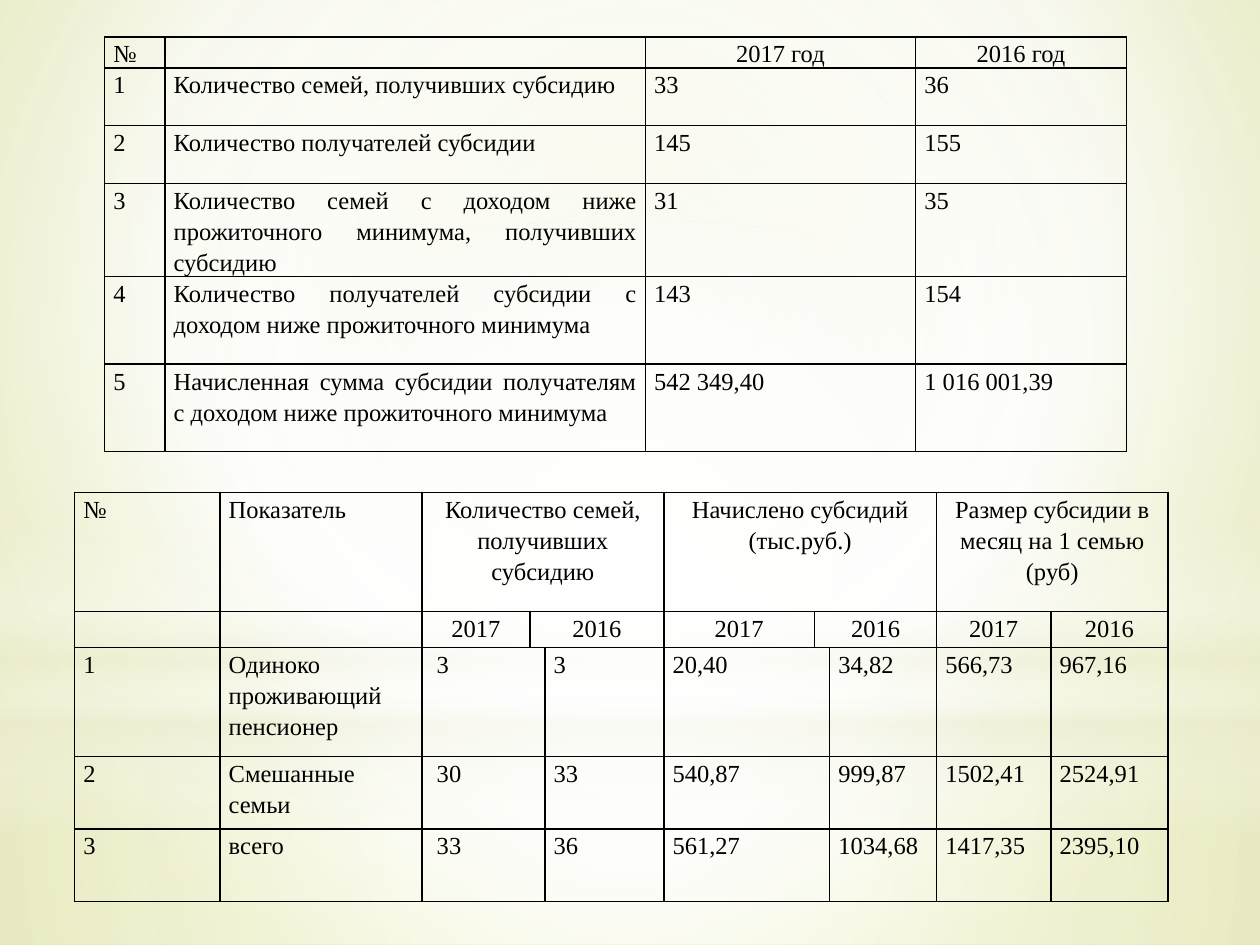
from dataclasses import dataclass
from typing import Optional

import lxml.etree
import pptx
import pptx.dml.color
import pptx.enum.shapes
import pptx.enum.text
import pptx.oxml
import pptx.oxml.ns
import pptx.util

Pt = pptx.util.Pt
SHAPES = pptx.enum.shapes.MSO_SHAPE
ALIGN = pptx.enum.text.PP_ALIGN
NAMESPACE = pptx.oxml.ns.nsdecls("a", "p")
INK = "000000"
FONT = "Times New Roman"
FONT_SIZE = 14


@dataclass
class Gradient:
    stops: list[tuple[int, str, int]]
    focus: Optional[tuple[int, int, int, int]] = None


@dataclass
class Glow:
    outline: pptx.enum.shapes.MSO_SHAPE
    top: float
    height: float
    gradient: Gradient


@dataclass
class Report:
    left: float
    top: float
    columns: list[float]
    heights: list[float]
    header_rows: int
    rows: list[list[Optional[str]]]


CENTRE = (50, 50, 50, 50)
PAPER = Gradient([(0, "E9EBC1", 100), (60, "FFFFFF", 100), (100, "DEE285", 100)], (20, 10, 20, 60))
GLOWS = [
    Glow(SHAPES.RECTANGLE, 402, 138,
         Gradient([(0, "FFFFFF", 91), (37, "FFFFFF", 76), (100, "ECEDD1", 79)], CENTRE)),
    Glow(SHAPES.RECTANGLE, 0, 402,
         Gradient([(0, "FFFFFF", 89), (48, "FFFFFF", 62), (100, "ECEDD1", 79)], CENTRE)),
    Glow(SHAPES.RECTANGLE, 296.5, 180,
         Gradient([(0, "FFFFFF", 0), (29, "FFFFFF", 30), (45, "ECEDD1", 40),
                   (55, "FFFFFF", 26), (65, "ECEDD1", 60), (100, "FFFFFF", 0)])),
    Glow(SHAPES.OVAL, 126, 402,
         Gradient([(0, "FFFFFF", 100), (56, "FFFFFF", 0)], CENTRE)),
]

SUBSIDIES = Report(
    59.75, 21, [34.5, 274.5, 154.5, 120.5], [17, 33, 33, 50, 50, 50], 1,
    [
        ["№", "", "2017 год", "2016 год"],
        ["1", "Количество семей, получивших субсидию", "33", "36"],
        ["2", "Количество получателей субсидии", "145", "155"],
        ["3", "Количество семей с доходом ниже прожиточного минимума, получивших субсидию", "31", "35"],
        ["4", "Количество получателей субсидии с доходом ниже прожиточного минимума", "143", "154"],
        ["5", "Начисленная сумма субсидии получателям с доходом ниже прожиточного минимума",
         "542 349,40", "1 016 001,39"],
    ],
)
FAMILIES = Report(
    42.6, 281.3, [83.1, 115.4, 61.7, 8.6, 68, 86.2, 8.6, 61.1, 65.3, 66.9],
    [68, 20.7, 62.2, 41.5, 41.5], 2,
    [
        ["№", "Показатель ", "Количество семей, получивших субсидию", None, None,
         "Начислено субсидий (тыс.руб.)", None, None, "Размер субсидии в месяц на 1 семью (руб)", None],
        ["", "", "2017", "2016", None, "2017", "2016", None, "2017", "2016"],
        ["1", "Одиноко проживающий пенсионер", " 3", None, "3", "20,40", None, "34,82", "566,73", "967,16"],
        ["2", "Смешанные семьи", " 30", None, "33", "540,87", None, "999,87", "1502,41", "2524,91"],
        ["3", "всего", " 33", None, "36", "561,27", None, "1034,68", "1417,35", "2395,10"],
    ],
)


def color(value: str) -> pptx.dml.color.RGBColor:
    return pptx.dml.color.RGBColor.from_string(value)


def gradient_element(gradient: Gradient) -> lxml.etree.ElementBase:
    stops = "".join(
        f'<a:gs pos="{position * 1000}"><a:srgbClr val="{shade}">'
        f'<a:alpha val="{alpha * 1000}"/></a:srgbClr></a:gs>'
        for position, shade, alpha in gradient.stops
    )
    direction = '<a:lin ang="5400000" scaled="0"/>'
    if gradient.focus:
        sides = " ".join(f'{side}="{share * 1000}"' for side, share in zip("ltrb", gradient.focus))
        direction = f'<a:path path="circle"><a:fillToRect {sides}/></a:path>'
    return pptx.oxml.parse_xml(
        f'<a:gradFill {NAMESPACE} rotWithShape="1"><a:gsLst>{stops}</a:gsLst>{direction}</a:gradFill>'
    )


def replace_fill(properties: lxml.etree.ElementBase, gradient: Gradient) -> None:
    plain = properties.find(pptx.oxml.ns.qn("a:solidFill"))
    properties.replace(plain, gradient_element(gradient))


def paint_background(slide: pptx.slide.Slide, gradient: Gradient) -> None:
    fill = slide.background.fill
    fill.solid()
    fill.fore_color.rgb = color("FFFFFF")
    properties = slide.element.find(".//" + pptx.oxml.ns.qn("p:bgPr"))
    replace_fill(properties, gradient)


def draw_glow(slide: pptx.slide.Slide, glow: Glow) -> None:
    shape = slide.shapes.add_shape(glow.outline, Pt(0), Pt(glow.top), Pt(720), Pt(glow.height))
    shape.shadow.inherit = False
    shape.line.fill.background()
    shape.fill.solid()
    shape.fill.fore_color.rgb = color("FFFFFF")
    replace_fill(shape.element.spPr, glow.gradient)


def format_cell(cell: pptx.table._Cell, text: str, centred: bool) -> None:
    cell.margin_left = cell.margin_right = Pt(5)
    cell.margin_top = cell.margin_bottom = Pt(0)
    cell.fill.background()
    properties = cell._tc.get_or_add_tcPr()
    for index, side in enumerate("LRTB"):
        properties.insert(index, pptx.oxml.parse_xml(
            f'<a:ln{side} {NAMESPACE} w="{Pt(1)}"><a:solidFill><a:srgbClr val="{INK}"/>'
            f'</a:solidFill></a:ln{side}>'
        ))
    paragraph = cell.text_frame.paragraphs[0]
    paragraph.text = text
    paragraph.alignment = ALIGN.CENTER if centred else ALIGN.JUSTIFY
    paragraph.line_spacing = 1.15
    for run in paragraph.runs:
        run.font.name = FONT
        run.font.size = Pt(FONT_SIZE)
        run.font.color.rgb = color(INK)
    if not text:
        paragraph._p.get_or_add_endParaRPr().set("sz", str(FONT_SIZE * 100))


def draw_report(slide: pptx.slide.Slide, report: Report) -> None:
    table = slide.shapes.add_table(
        len(report.heights), len(report.columns), Pt(report.left), Pt(report.top),
        Pt(sum(report.columns)), Pt(sum(report.heights)),
    ).table
    table.first_row = table.horz_banding = False
    for column, width in zip(table.columns, report.columns):
        column.width = Pt(width)
    for row, height in zip(table.rows, report.heights):
        row.height = Pt(height)
    for r, texts in enumerate(report.rows):
        for c, text in enumerate(texts):
            format_cell(table.cell(r, c), text or "", r < report.header_rows and c > 1)
        starts = [c for c, text in enumerate(texts) if text is not None]
        for start, following in zip(starts, starts[1:] + [len(texts)]):
            if following - start > 1:
                table.cell(r, start).merge(table.cell(r, following - 1))


def main() -> None:
    presentation = pptx.Presentation()
    presentation.slide_width, presentation.slide_height = Pt(720), Pt(540)
    slide = presentation.slides.add_slide(presentation.slide_layouts[6])
    paint_background(slide, PAPER)
    for glow in GLOWS:
        draw_glow(slide, glow)
    for report in (SUBSIDIES, FAMILIES):
        draw_report(slide, report)
    presentation.save("out.pptx")


if __name__ == "__main__":
    main()
